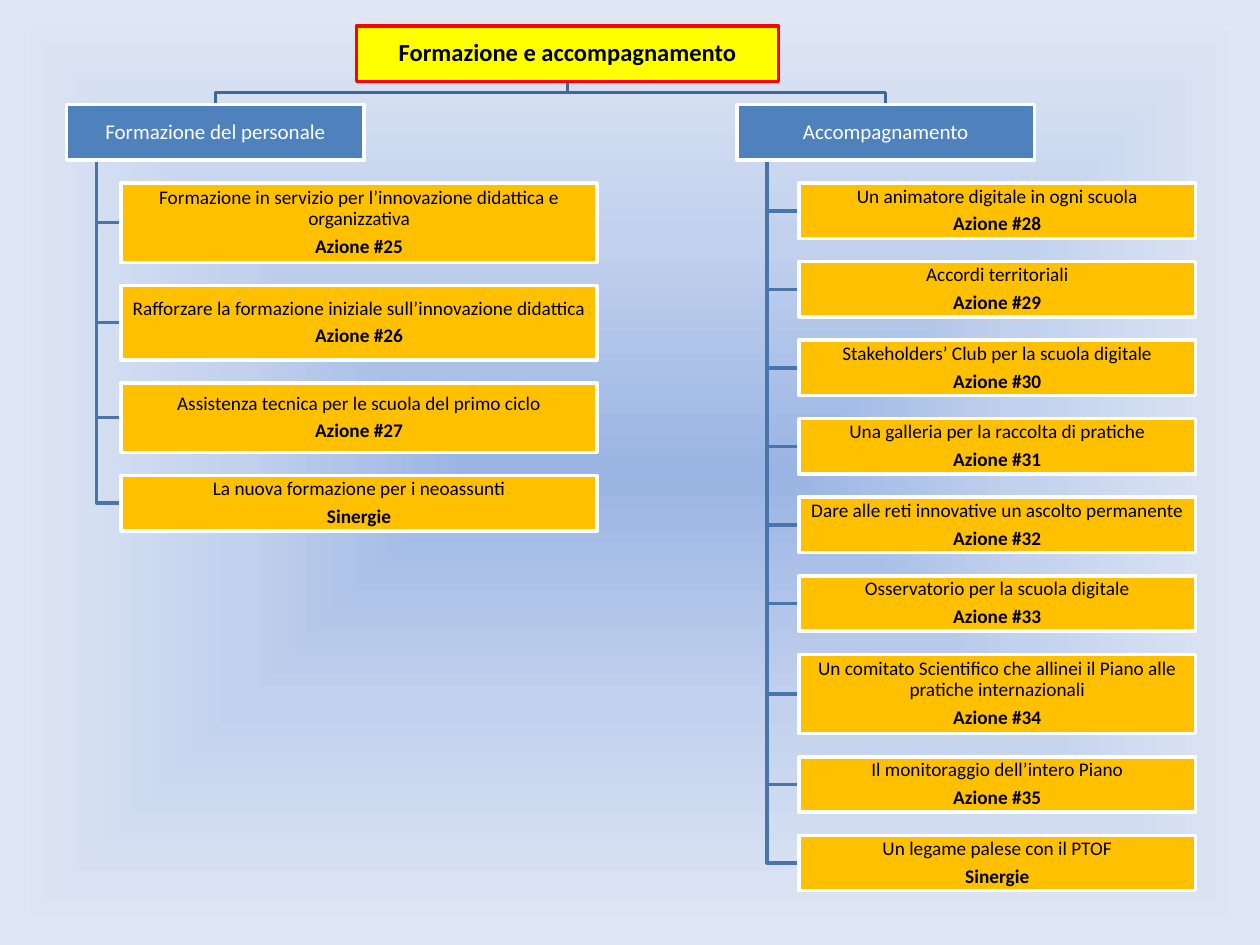
from dataclasses import dataclass

from pptx import Presentation
from pptx.dml.color import RGBColor
from pptx.enum.shapes import MSO_SHAPE
from pptx.enum.text import MSO_ANCHOR, MSO_AUTO_SIZE, PP_ALIGN
from pptx.oxml import parse_xml
from pptx.oxml.ns import nsdecls
from pptx.util import Emu, Pt

PX = 3048  # EMU per px, 300 px to the inch


@dataclass(frozen=True)
class Theme:
    font: str = "Calibri"
    root_size: int = 14
    branch_size: int = 12
    action_size: int = 11
    root_fill: str = "FFFF00"
    root_line: str = "FF0000"
    branch_fill: str = "4F81BD"
    action_fill: str = "FFC000"
    dark: str = "000000"
    light: str = "FFFFFF"
    trunk: str = "3F6797"
    twig: str = "4875AC"
    line_width: int = 2
    backdrop: tuple = ((0, "9AB5E4"), (50, "C2D1ED"), (100, "E1E8F5"))


THEME = Theme()

# Layout in px
BOX_H, GAP = 132, 55
TWO_LINE_H = 189
ROOT_LEFT, ROOT_TOP, ROOT_W = 849, 62, 1005
ROOT_MID = ROOT_LEFT + ROOT_W // 2
BRANCH_TOP = ROOT_TOP + BOX_H + GAP
BRANCH_W = 708
SPINE_INSET = 71
INSET = 3

# Each branch: heading, left, actions' left, actions' width,
# actions as (text, tag, height)
BRANCHES = [
    ("Formazione del personale", 159, 288, 1134, [
        ("Formazione in servizio per l’innovazione didattica e organizzativa",
         "Azione #25", TWO_LINE_H),
        ("Rafforzare la formazione iniziale sull’innovazione didattica",
         "Azione #26", 177),
        ("Assistenza tecnica per le scuola del primo ciclo", "Azione #27", 165),
        ("La nuova formazione per i neoassunti", "Sinergie", BOX_H),
    ]),
    ("Accompagnamento", 1755, 1902, 945, [
        ("Un animatore digitale in ogni scuola", "Azione #28", BOX_H),
        ("Accordi territoriali", "Azione #29", BOX_H),
        ("Stakeholders’ Club per la scuola digitale", "Azione #30", BOX_H),
        ("Una galleria per la raccolta di pratiche", "Azione #31", BOX_H),
        ("Dare alle reti innovative un ascolto permanente", "Azione #32", BOX_H),
        ("Osservatorio per la scuola digitale", "Azione #33", BOX_H),
        ("Un comitato Scientifico che allinei il Piano alle pratiche internazionali",
         "Azione #34", TWO_LINE_H),
        ("Il monitoraggio dell’intero Piano", "Azione #35", BOX_H),
        ("Un legame palese con il PTOF", "Sinergie", BOX_H),
    ]),
]


def rgb(value):
    return RGBColor.from_string(value)


def px(*lengths):
    return [Emu(length * PX) for length in lengths]


def paint_backdrop(slide):
    """Gradient spreading from the centre of the slide."""
    stops = "".join(
        f'<a:gs pos="{pos * 1000}"><a:srgbClr val="{color}"/></a:gs>'
        for pos, color in THEME.backdrop)
    backdrop = parse_xml(
        f'<p:bg {nsdecls("p", "a")}><p:bgPr><a:gradFill rotWithShape="1">'
        f'<a:gsLst>{stops}</a:gsLst><a:path path="shape">'
        '<a:fillToRect l="50000" t="50000" r="50000" b="50000"/></a:path>'
        '</a:gradFill><a:effectLst/></p:bgPr></p:bg>')
    slide.element.cSld.insert(0, backdrop)


def style_box(box, fill, line):
    box.shadow.inherit = False
    box.fill.solid()
    box.fill.fore_color.rgb = rgb(fill)
    box.line.color.rgb = rgb(line)
    box.line.width = Pt(THEME.line_width)


def write(box, lines, size, color):
    """Fill a box with (text, bold) lines, centred both ways."""
    frame = box.text_frame
    frame.word_wrap = True
    frame.auto_size = MSO_AUTO_SIZE.NONE
    frame.vertical_anchor = MSO_ANCHOR.MIDDLE
    (frame.margin_left, frame.margin_top,
     frame.margin_right, frame.margin_bottom) = px(*[INSET] * 4)
    for index, (text, bold) in enumerate(lines):
        paragraph = frame.add_paragraph() if index else frame.paragraphs[0]
        paragraph.text = text
        paragraph.alignment = PP_ALIGN.CENTER
        paragraph.line_spacing = 0.9
        paragraph.space_before = Pt(0)
        paragraph.space_after = Pt(4)
        font = paragraph.font
        font.name, font.size, font.bold = THEME.font, Pt(size), bold
        font.color.rgb = rgb(color)


def add_box(slide, bounds, fill, lines, size, color):
    box = slide.shapes.add_shape(MSO_SHAPE.RECTANGLE, *px(*bounds))
    style_box(box, fill, THEME.light)
    write(box, lines, size, color)


def add_elbow(slide, points, color):
    builder = slide.shapes.build_freeform(*points[0], scale=PX)
    builder.add_line_segments(points[1:], close=False)
    elbow = builder.convert_to_shape()
    elbow.shadow.inherit = False
    elbow.fill.background()
    elbow.line.color.rgb = rgb(color)
    elbow.line.width = Pt(THEME.line_width)


def format_root(slide):
    root = slide.shapes.title
    root.left, root.top, root.width, root.height = px(
        ROOT_LEFT, ROOT_TOP, ROOT_W, BOX_H)
    style_box(root, THEME.root_fill, THEME.root_line)
    write(root, [("Formazione e accompagnamento", True)],
          THEME.root_size, THEME.dark)


def add_branch(slide, heading, left, action_left, action_width, actions):
    # Trunk from the root, clear of its border
    root_bottom = ROOT_TOP + BOX_H
    bend = root_bottom + GAP // 2
    middle = left + BRANCH_W // 2
    add_elbow(slide, [(ROOT_MID, root_bottom + 4), (ROOT_MID, bend),
                      (middle, bend), (middle, BRANCH_TOP)], THEME.trunk)

    # Actions, each hung from the spine
    spine = left + SPINE_INSET
    branch_bottom = BRANCH_TOP + BOX_H
    top = branch_bottom + GAP
    for text, tag, height in actions:
        center = top + height // 2
        add_elbow(slide, [(spine, branch_bottom), (spine, center),
                          (action_left, center)], THEME.twig)
        add_box(slide, (action_left, top, action_width, height),
                THEME.action_fill, [(text, False), (tag, True)],
                THEME.action_size, THEME.dark)
        top += height + GAP

    # Heading
    add_box(slide, (left, BRANCH_TOP, BRANCH_W, BOX_H), THEME.branch_fill,
            [(heading, False)], THEME.branch_size, THEME.light)


def main():
    deck = Presentation()
    deck.slide_width, deck.slide_height = px(3000, 2250)
    slide = deck.slides.add_slide(deck.slide_layouts[5])
    paint_backdrop(slide)
    format_root(slide)
    for branch in BRANCHES:
        add_branch(slide, *branch)
    deck.save("out.pptx")


if __name__ == "__main__":
    main()
